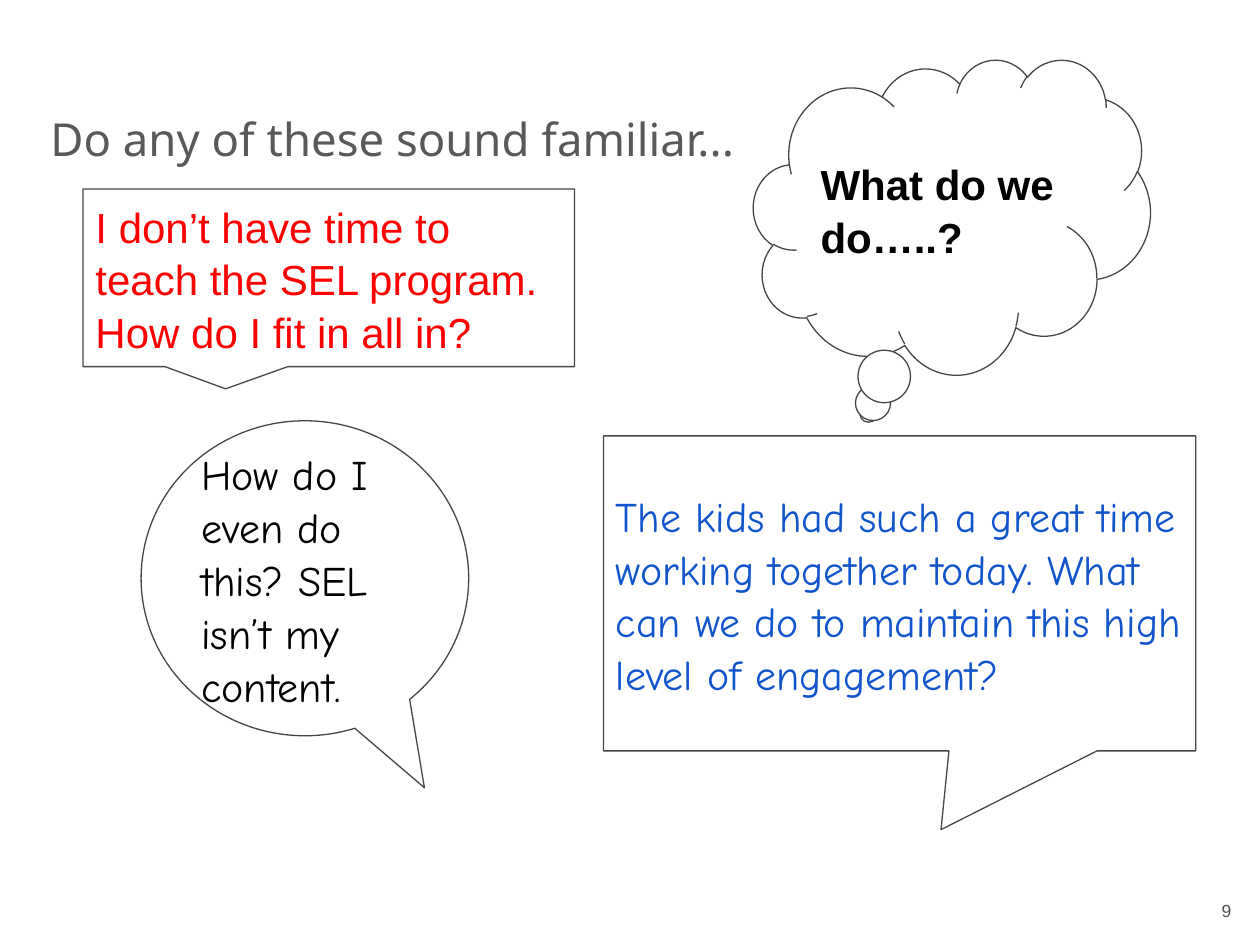
import pptx
import pptx.dml.color
import pptx.enum.shapes
import pptx.enum.text
import pptx.util
from dataclasses import dataclass

Inches, Pt = pptx.util.Inches, pptx.util.Pt
Kind = pptx.enum.shapes.MSO_SHAPE
Align = pptx.enum.text.PP_ALIGN
Anchor = pptx.enum.text.MSO_ANCHOR


@dataclass
class Callout:
    kind: Kind
    box: tuple[float, float, float, float]
    tail: tuple[float, ...]
    text: str
    face: str
    color: str
    bold: bool = False


CALLOUTS = [
    Callout(Kind.RECTANGULAR_CALLOUT, (0.66, 1.5, 3.9, 1.41), (-0.21, 0.625),
            "I don’t have time to teach the SEL program. How do I fit in all in?",
            "Arial", "FF0000"),
    Callout(Kind.ROUNDED_RECTANGULAR_CALLOUT, (4.79, 3.46, 4.7, 2.5), (0.07, 0.75, 0),
            "The kids had such a great time working together today. "
            "What can we do to maintain this high level of engagement?",
            "Comic Neue", "1155CC"),
    Callout(Kind.OVAL_CALLOUT, (1.12, 3.34, 2.6, 2.5), (0.365, 0.665),
            "How do I even do this? SEL isn’t my content.",
            "Comic Neue", "000000"),
    Callout(Kind.CLOUD_CALLOUT, (5.98, 0.47, 3.15, 2.5), (-0.21, 0.625),
            "What do we do…..?", "Arial", "000000", True),
]


def paint(target, color: str) -> None:
    """Set a font, line or fill colour from a hex string."""
    if hasattr(target, "solid"):
        target.solid()
        target = target.fore_color
    else:
        target = target.color
    target.rgb = pptx.dml.color.RGBColor.from_string(color)


def write(shape, text: str, face: str, size: float, color: str,
          align: Align = Align.LEFT, pad: float = 0.1, bold: bool = False):
    frame = shape.text_frame
    frame.text = text
    frame.word_wrap = True
    frame.auto_size = pptx.enum.text.MSO_AUTO_SIZE.NONE
    frame.vertical_anchor = Anchor.MIDDLE
    frame.margin_left = frame.margin_right = Inches(0.1)
    frame.margin_top = frame.margin_bottom = Inches(pad)
    para = frame.paragraphs[0]
    para.alignment = align
    para.font.name, para.font.size, para.font.bold = face, Pt(size), bold
    paint(para.font, color)
    return para


def draw(slide, item: Callout) -> None:
    shape = slide.shapes.add_shape(item.kind, *map(Inches, item.box))
    shape.shadow.inherit = False
    for i, value in enumerate(item.tail):
        shape.adjustments[i] = value
    paint(shape.fill, "FFFFFF")
    paint(shape.line, "454645")
    shape.line.width = Pt(0.75)
    para = write(shape, item.text, item.face, 24, item.color, bold=item.bold)
    para.line_spacing = 1.05


def main() -> None:
    deck = pptx.Presentation()
    deck.slide_width, deck.slide_height = Inches(10), Inches(7.5)
    slide = deck.slides.add_slide(deck.slide_layouts[5])

    # Title
    title = slide.shapes.title
    title.left, title.top, title.width, title.height = map(
        Inches, (0.3, 0.47, 9.38, 1.25))
    write(title, "Do any of these sound familiar...", "Noto Sans", 26, "595959")

    # Speech and thought bubbles
    for item in CALLOUTS:
        draw(slide, item)

    # Page number
    page = slide.shapes.add_textbox(*map(Inches, (8.28, 7.09, 1.59, 0.27)))
    write(page, "9", "Arial", 10, "50514F", Align.RIGHT, 0.05)

    deck.save("out.pptx")


if __name__ == "__main__":
    main()
